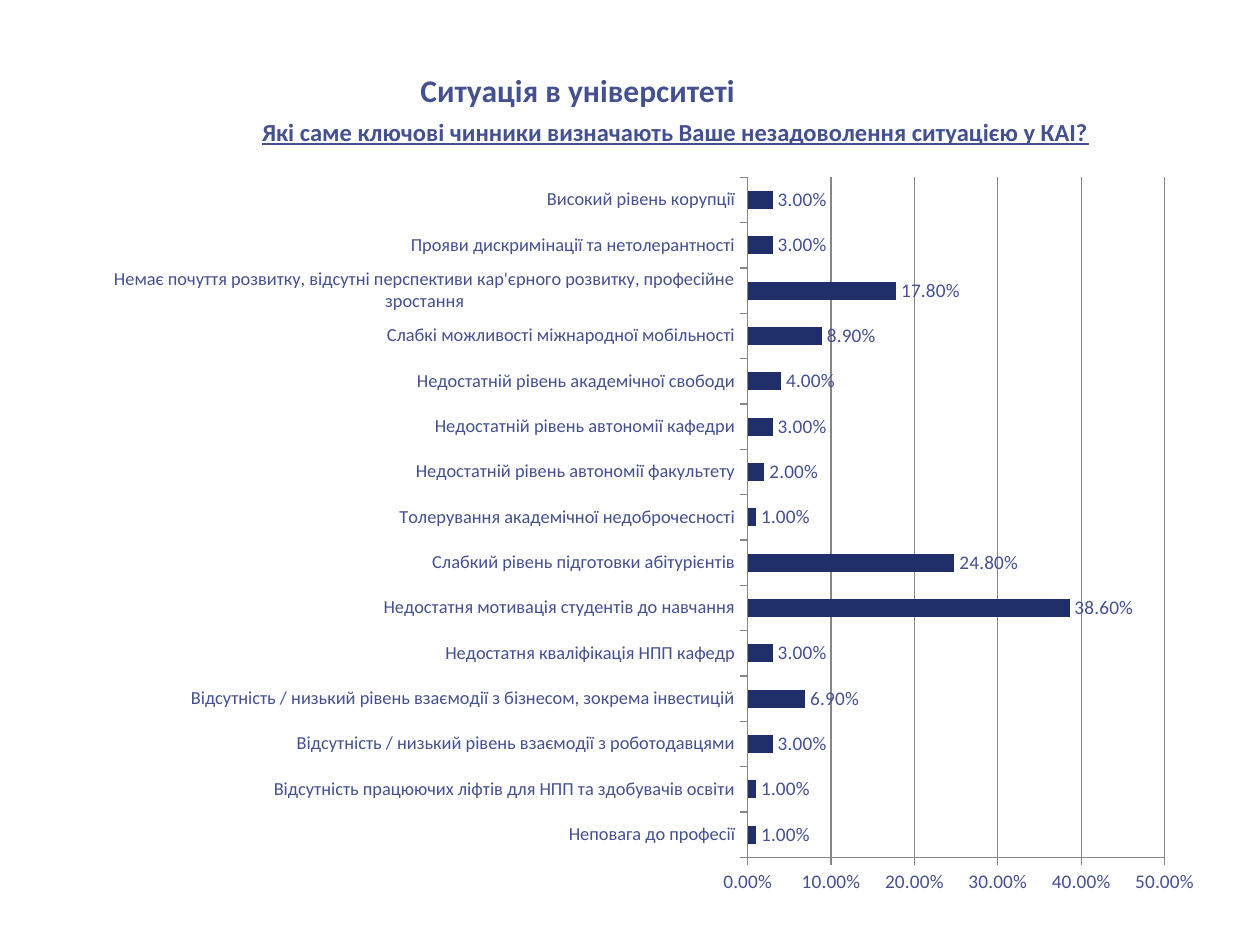
"""Build a slide with a bar chart of the reasons for discontent at a university."""
from lxml import etree
from pptx import Presentation
from pptx.chart.data import CategoryChartData as Data
from pptx.dml.color import RGBColor as RGB
from pptx.enum.chart import XL_CHART_TYPE as Kind, XL_LABEL_POSITION as Spot, XL_TICK_MARK as Tick
from pptx.enum.text import MSO_ANCHOR as Anchor, MSO_AUTO_SIZE as Fit, PP_ALIGN as Align
from pptx.oxml.ns import qn
from pptx.util import Inches, Pt

INK, BAR, GRID = "44508F", "202F6A", "868686"
FORM = "0.00%"


def paint(part, code):
    part.rgb = RGB.from_string(code)


def style(font, size, **more):
    for key, val in {"name": "Calibri", "size": Pt(size), **more}.items():
        setattr(font, key, val)
    paint(font.color, INK)


deck = Presentation()
deck.slide_width, deck.slide_height = Inches(10), Inches(7.5)
slide = deck.slides.add_slide(deck.slide_layouts[5])

reasons = [
    ("Неповага до професії", 0.01),
    ("Відсутність працюючих ліфтів для НПП та здобувачів освіти", 0.01),
    ("Відсутність / низький рівень взаємодії з роботодавцями", 0.03),
    ("Відсутність / низький рівень взаємодії з бізнесом, зокрема інвестицій", 0.069),
    ("Недостатня кваліфікація НПП кафедр", 0.03),
    ("Недостатня мотивація студентів до навчання", 0.386),
    ("Слабкий рівень підготовки абітурієнтів", 0.248),
    ("Толерування академічної недоброчесності", 0.01),
    ("Недостатній рівень автономії факультету", 0.02),
    ("Недостатній рівень автономії кафедри", 0.03),
    ("Недостатній рівень академічної свободи", 0.04),
    ("Слабкі можливості міжнародної мобільності", 0.089),
    ("Немає почуття розвитку, відсутні перспективи кар'єрного розвитку, "
     "професійне зростання", 0.178),
    ("Прояви дискримінації та нетолерантності", 0.03),
    ("Високий рівень корупції", 0.03),
]
data = Data(number_format=FORM)
data.categories = [name for name, share in reasons]
data.add_series("Series 1", [share for name, share in reasons])
area = [Inches(n) for n in (0.75, 1.29, 8.94, 5.93)]
chart = slide.shapes.add_chart(Kind.BAR_CLUSTERED, *area, data).chart
chart.has_legend = chart.has_title = False
style(chart.font, 11)

plot = chart.plots[0]
plot.gap_width, plot.vary_by_categories = 150, False
fill = plot.series[0].format.fill
fill.solid()
paint(fill.fore_color, BAR)

plot.has_data_labels = True
marks = plot.data_labels
for key, val in {"show_value": True, "number_format": FORM,
                 "number_format_is_linked": False, "position": Spot.OUTSIDE_END}.items():
    setattr(marks, key, val)
style(marks.font, 11)

cats, vals = chart.category_axis, chart.value_axis
for axis, size in ((cats, 10.5), (vals, 11)):
    axis.major_tick_mark, axis.minor_tick_mark = Tick.OUTSIDE, Tick.NONE
    style(axis.tick_labels.font, size)
cats.has_major_gridlines = False
for key, val in {"has_major_gridlines": True, "minimum_scale": 0,
                 "maximum_scale": 0.5, "major_unit": 0.1}.items():
    setattr(vals, key, val)
vals.tick_labels.number_format = FORM
vals.tick_labels.number_format_is_linked = False
for part in (cats, vals, vals.major_gridlines):
    part.format.line.width = Pt(0.75)
    paint(part.format.line.color, GRID)

frame = plot._element.getparent()
for old in frame.findall(qn("c:layout")):
    frame.remove(old)
grid = etree.Element(qn("c:layout"))
hand = etree.SubElement(grid, qn("c:manualLayout"))
for tag, val in (("layoutTarget", "inner"), ("xMode", "edge"), ("yMode", "edge"),
                 ("x", 0.58), ("y", 0.02), ("w", 0.37), ("h", 0.91)):
    etree.SubElement(hand, qn(f"c:{tag}"), val=str(val))
frame.insert(0, grid)

head = slide.shapes.title
sub = slide.shapes.add_textbox(0, 0, 0, 0)
for box, text, spot, size, line in (
    (head, "Ситуація в університеті", (1.75, 0.51, 5.67, 0.4), 18, False),
    (sub, "Які саме ключові чинники визначають Ваше незадоволення ситуацією у КАІ?",
     (1.07, 0.88, 8.58, 0.34), 14, True),
):
    box.left, box.top, box.width, box.height = [Inches(n) for n in spot]
    body = box.text_frame
    body.text = text
    for key, val in {"word_wrap": True, "auto_size": Fit.SHAPE_TO_FIT_TEXT,
                     "vertical_anchor": Anchor.TOP}.items():
        setattr(body, key, val)
    para = body.paragraphs[0]
    para.alignment = Align.CENTER
    style(para.runs[0].font, size, bold=True, underline=line)

deck.save("out.pptx")
